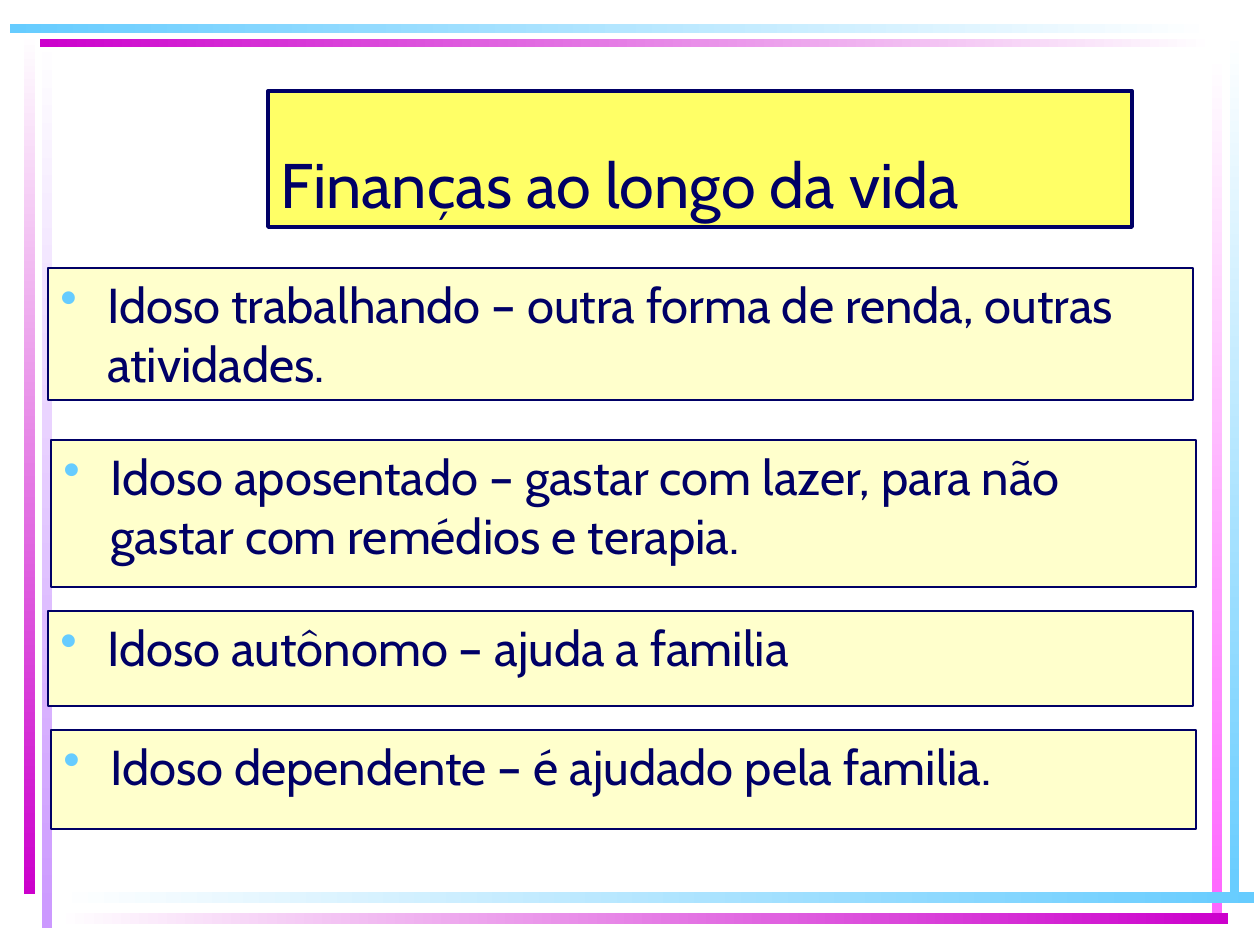
import pptx
import pptx.util
import pptx.dml.color
import pptx.enum.shapes
import pptx.enum.text
import pptx.oxml
import pptx.oxml.ns

RGB = pptx.dml.color.RGBColor
WHITE = RGB(0xFF, 0xFF, 0xFF)
NAVY = RGB(0x00, 0x00, 0x66)
CYAN = RGB(0x66, 0xCC, 0xFF)
MAGENTA = RGB(0xCC, 0x00, 0xCC)
PINK = RGB(0xFF, 0x66, 0xFF)
LILAC = RGB(0xCC, 0x99, 0xFF)
YELLOW = RGB(0xFF, 0xFF, 0x66)
CREAM = RGB(0xFF, 0xFF, 0xCC)
FONT = "Cabin"
RECT = pptx.enum.shapes.MSO_SHAPE.RECTANGLE
ANCHOR = pptx.enum.text.MSO_ANCHOR
LEFT_TO_RIGHT, TOP_TO_BOTTOM = 0, 270

# left, top, width, height, first colour, last colour, direction
FRAME_BARS = [
    (42, 35, 10, 893, WHITE, LILAC, TOP_TO_BOTTOM),
    (24, 32, 11, 862, WHITE, MAGENTA, TOP_TO_BOTTOM),
    (1230, 30, 9, 873, WHITE, CYAN, TOP_TO_BOTTOM),
    (1212, 53, 10, 860, WHITE, PINK, TOP_TO_BOTTOM),
    (57, 892, 1197, 11, WHITE, CYAN, LEFT_TO_RIGHT),
    (57, 913, 1171, 11, WHITE, MAGENTA, LEFT_TO_RIGHT),
    (40, 39, 1174, 8, MAGENTA, WHITE, LEFT_TO_RIGHT),
    (10, 24, 1205, 9, CYAN, WHITE, LEFT_TO_RIGHT),
]

# left, top, height, text
TOPICS = [
    (48, 268, 132, "Idoso trabalhando – outra forma de renda, outras atividades."),
    (51, 440, 147, "Idoso aposentado – gastar com lazer, para não gastar com remédios e terapia."),
    (48, 611, 95, "Idoso autônomo – ajuda a familia"),
    (51, 730, 99, "Idoso dependente – é ajudado pela familia."),
]
TOPIC_WIDTH = 1145


def px(n):
    return pptx.util.Emu(n * 914400 // 126)


def add_rect(s, left, top, width, height):
    sp = s.shapes.add_shape(RECT, px(left), px(top), px(width), px(height))
    sp.shadow.inherit = False
    return sp


def add_bar(s, left, top, width, height, first, last, angle):
    sp = add_rect(s, left, top, width, height)
    sp.line.fill.background()
    sp.fill.gradient()
    sp.fill.gradient_angle = angle
    for stop, color in zip(sp.fill.gradient_stops, (first, last)):
        stop.color.rgb = color
        stop.position = 0 if color is first else 1


def paint(sp, fill, line_width):
    sp.fill.solid()
    sp.fill.fore_color.rgb = fill
    sp.line.color.rgb = NAVY
    sp.line.width = pptx.util.Pt(line_width)


def write(sp, text, size, anchor):
    """Set left-aligned text and return its paragraph."""
    tf = sp.text_frame
    tf.text = text
    tf.word_wrap = True
    tf.auto_size = pptx.enum.text.MSO_AUTO_SIZE.NONE
    tf.vertical_anchor = anchor
    p = tf.paragraphs[0]
    p.alignment = pptx.enum.text.PP_ALIGN.LEFT
    font = p.runs[0].font
    font.name = FONT
    font.size = pptx.util.Pt(size)
    font.color.rgb = NAVY
    return p


def add_bullet(p, color):
    """Give a paragraph a hanging bullet and 20% space before."""
    pPr = p._p.get_or_add_pPr()
    pPr.set("marL", str(px(47)))
    pPr.set("indent", str(-px(47)))
    ns = pptx.oxml.ns.nsdecls("a")
    for xml in (
        f'<a:spcBef {ns}><a:spcPct val="20000"/></a:spcBef>',
        f'<a:buClr {ns}><a:srgbClr val="{color}"/></a:buClr>',
        f'<a:buChar {ns} char="•"/>',
    ):
        pPr.append(pptx.oxml.parse_xml(xml))


def set_title(s, text):
    sp = s.shapes.title
    sp.left, sp.top, sp.width, sp.height = px(268), px(91), px(864), px(136)
    paint(sp, YELLOW, 2.25)
    write(sp, text, 36, ANCHOR.BOTTOM)


def add_topic(s, left, top, height, text):
    sp = add_rect(s, left, top, TOPIC_WIDTH, height)
    paint(sp, CREAM, 0.75)
    add_bullet(write(sp, text, 28, ANCHOR.TOP), CYAN)


def main():
    prs = pptx.Presentation()
    prs.slide_width = pptx.util.Inches(10)
    prs.slide_height = pptx.util.Inches(7.5)
    s = prs.slides.add_slide(prs.slide_layouts[5])
    for bar in FRAME_BARS:
        add_bar(s, *bar)
    set_title(s, "Finanças ao longo da vida")
    for topic in TOPICS:
        add_topic(s, *topic)
    prs.save("out.pptx")


if __name__ == "__main__":
    main()
